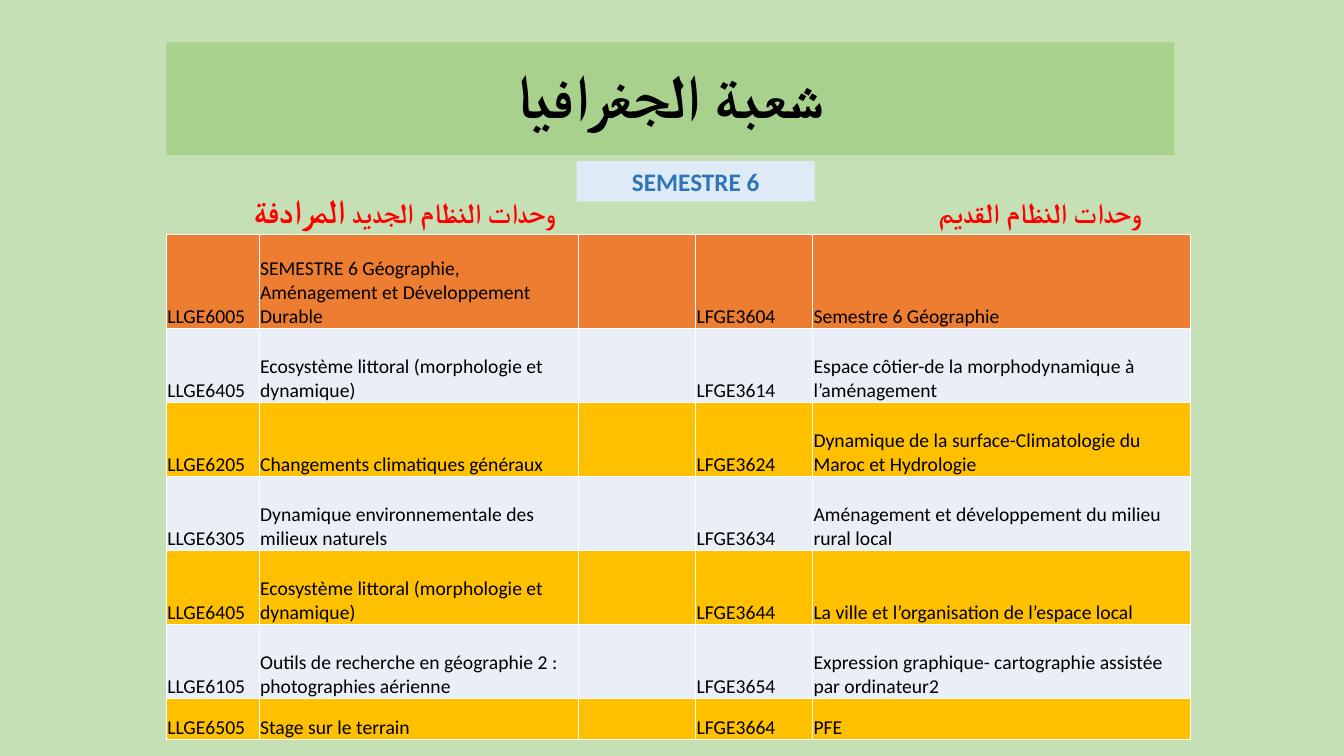
from dataclasses import dataclass

from lxml.etree import SubElement
from pptx import Presentation
from pptx.dml.color import RGBColor as RGB
from pptx.enum.shapes import MSO_SHAPE as SHAPE
from pptx.enum.text import MSO_ANCHOR as ANCHOR, MSO_AUTO_SIZE as FIT, PP_ALIGN as ALIGN
from pptx.oxml.ns import qn
from pptx.util import Inches, Pt


@dataclass(frozen=True)
class Theme:
    font: str = "Calibri"
    page: str = "C5E0B4"
    banner: str = "A9D18E"
    badge: str = "DEEBF7"
    badge_text: str = "2E75B6"
    heading: str = "FF0000"
    ink: str = "000000"
    border: str = "FFFFFF"
    header: str = "ED7D31"
    stripes: tuple = ("EAEFF7", "FFC000")
    title_size: int = 44
    strong_size: int = 24
    heading_size: int = 20
    badge_size: int = 18
    cell_size: int = 14


THEME = Theme()


def write(tf, *runs, color=THEME.ink, bold=False, align=None, rtl=False, spacing=None):
    p = tf.paragraphs[0]
    p.alignment = align
    if spacing:
        p.line_spacing = spacing
    if rtl:
        p._p.get_or_add_pPr().set("rtl", "1")
    for text, size in runs:
        r = p.add_run()
        r.text = text
        r.font.name = THEME.font
        r.font.size = Pt(size)
        r.font.bold = bold
        r.font.color.rgb = RGB.from_string(color)
        if rtl:
            SubElement(r._r.get_or_add_rPr(), qn("a:cs"), typeface=THEME.font)


def paint(target, color):
    target.fill.solid()
    target.fill.fore_color.rgb = RGB.from_string(color)


class Deck:
    """Builds slide elements placed in percent of the slide's width and height."""

    def __init__(self, theme):
        self.theme = theme
        self.prs = Presentation()
        self.prs.slide_width, self.prs.slide_height = Inches(13.33), Inches(7.5)
        self.slide = self.prs.slides.add_slide(self.prs.slide_layouts[5])
        paint(self.slide.background, theme.page)

    def x(self, share):
        return int(self.prs.slide_width * share / 100)

    def y(self, share):
        return int(self.prs.slide_height * share / 100)

    def area(self, left, top, width, height):
        return self.x(left), self.y(top), self.x(width), self.y(height)

    def title(self, text, *place):
        sp = self.slide.shapes.title
        sp.left, sp.top, sp.width, sp.height = self.area(*place)
        paint(sp, self.theme.banner)
        tf = sp.text_frame
        tf.auto_size = FIT.NONE
        tf.vertical_anchor = ANCHOR.MIDDLE
        write(tf, (text, self.theme.title_size), bold=True, align=ALIGN.CENTER,
              rtl=True, spacing=0.9)

    def heading(self, runs, *place):
        tf = self.slide.shapes.add_textbox(*self.area(*place)).text_frame
        tf.word_wrap = True
        tf.auto_size = FIT.SHAPE_TO_FIT_TEXT
        write(tf, *runs, color=self.theme.heading, bold=True, align=ALIGN.CENTER, rtl=True)

    def badge(self, text, *place):
        sp = self.slide.shapes.add_shape(SHAPE.RECTANGLE, *self.area(*place))
        sp.shadow.inherit = False
        sp.line.fill.background()
        paint(sp, self.theme.badge)
        tf = sp.text_frame
        tf.word_wrap = True
        tf.auto_size = FIT.SHAPE_TO_FIT_TEXT
        tf.vertical_anchor = ANCHOR.TOP
        write(tf, (text, self.theme.badge_size), color=self.theme.badge_text,
              bold=True, align=ALIGN.CENTER)

    def table(self, rows, left, top, widths, heights):
        place = self.area(left, top, sum(widths), sum(heights))
        table = self.slide.shapes.add_table(len(rows), len(widths), *place).table
        for column, width in zip(table.columns, widths):
            column.width = self.x(width)
        for i, (row, height) in enumerate(zip(rows, heights)):
            table.rows[i].height = self.y(height)
            fill = self.theme.stripes[(i - 1) % 2] if i else self.theme.header
            for j, text in enumerate(row):
                self.cell(table.cell(i, j), text, fill)

    def cell(self, cell, text, fill):
        cell.margin_left = cell.margin_right = cell.margin_top = Inches(0.01)
        cell.margin_bottom = 0
        cell.vertical_anchor = ANCHOR.BOTTOM
        if text:
            write(cell.text_frame, (text, self.theme.cell_size))
        tcPr = cell._tc.get_or_add_tcPr()
        for side in ("lnL", "lnR", "lnT", "lnB"):
            ln = SubElement(tcPr, qn(f"a:{side}"), w=str(Pt(1)))
            solid = SubElement(ln, qn("a:solidFill"))
            SubElement(solid, qn("a:srgbClr"), val=self.theme.border)
        paint(cell, fill)


MODULES = [
    ("LLGE6005", "SEMESTRE 6 Géographie, Aménagement et Développement Durable", "",
     "LFGE3604", "Semestre 6 Géographie"),
    ("LLGE6405", "Ecosystème littoral (morphologie et dynamique)", "",
     "LFGE3614", "Espace côtier-de la morphodynamique à l’aménagement"),
    ("LLGE6205", "Changements climatiques généraux", "",
     "LFGE3624", "Dynamique de la surface-Climatologie du Maroc et Hydrologie"),
    ("LLGE6305", "Dynamique environnementale des milieux naturels", "",
     "LFGE3634", "Aménagement et développement du milieu rural local"),
    ("LLGE6405", "Ecosystème littoral (morphologie et dynamique)", "",
     "LFGE3644", "La ville et l’organisation de l’espace local"),
    ("LLGE6105", "Outils de recherche en géographie 2 : photographies aérienne", "",
     "LFGE3654", "Expression graphique- cartographie assistée par ordinateur2"),
    ("LLGE6505", "Stage sur le terrain", "", "LFGE3664", "PFE"),
]


def main():
    deck = Deck(THEME)
    deck.title("شعبة الجغرافيا", 12.38, 5.6, 75, 14.93)
    deck.heading([("وحدات النظام الجديد ", THEME.heading_size),
                  ("المرادفة", THEME.strong_size)], 13.35, 24.4, 33.46, 6.67)
    deck.heading([("وحدات النظام القديم", THEME.heading_size)], 60.62, 25.2, 33.46, 5.87)
    deck.badge("SEMESTRE 6", 42.91, 21.33, 17.7, 5.33)
    deck.table(MODULES, 12.38, 31.07, [6.9, 23.78, 8.7, 8.7, 28.13],
               [12.4] + [9.79] * 5 + [5.4])
    deck.prs.save("out.pptx")


if __name__ == "__main__":
    main()
